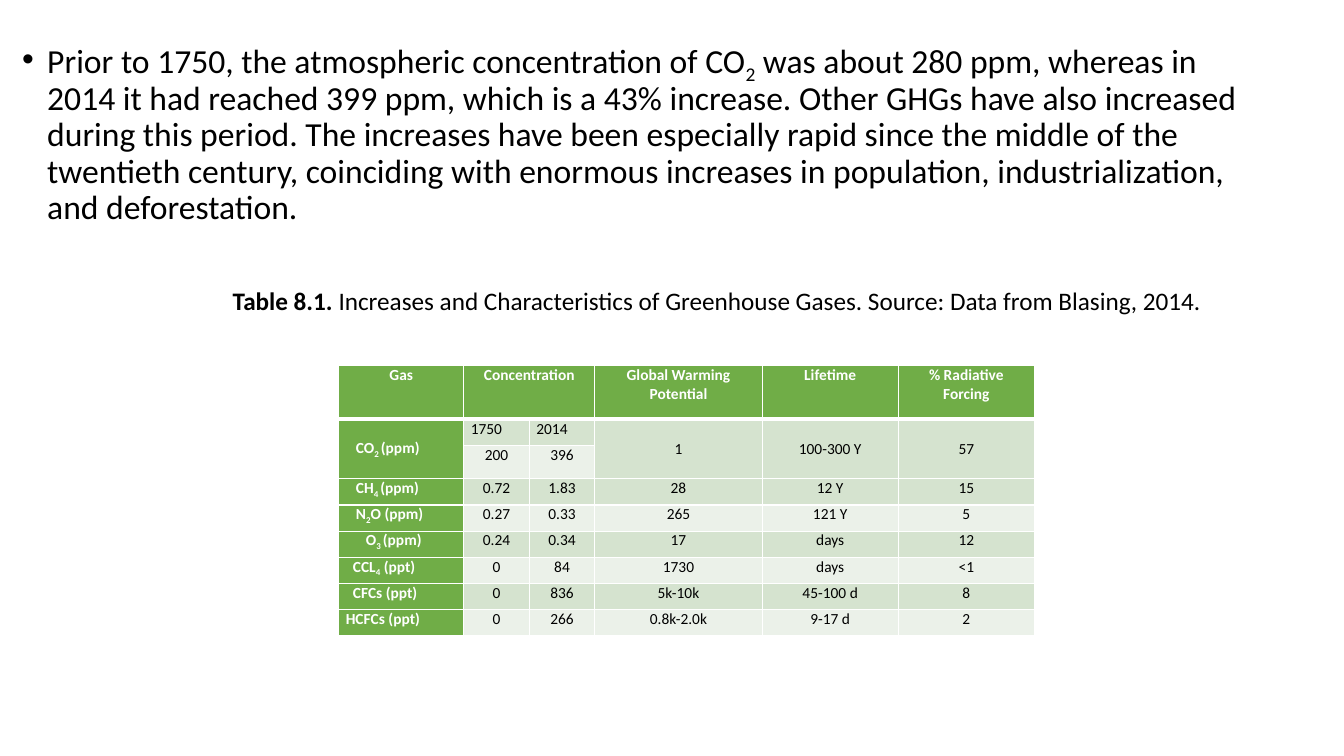
import pptx
import pptx.dml.color
import pptx.enum.text
import pptx.util
from lxml import etree
from pptx.oxml.ns import qn

Inches = pptx.util.Inches
Pt = pptx.util.Pt
Align = pptx.enum.text.PP_ALIGN
Anchor = pptx.enum.text.MSO_ANCHOR

THEME = {
    "font": "Calibri",
    "text": "000000", "on_green": "FFFFFF", "border": "FFFFFF",
    "green": "70AD47", "bands": ["D5E3CF", "EBF1E9"],
    "body_size": 24, "caption_size": 18, "table_size": 11,
    "thin": 1, "thick": 3,
}

# Text between underscores is set as subscript.
INTRO = (
    "Prior to 1750, the atmospheric concentration of CO_2_ was about 280 ppm, "
    "whereas in 2014 it had reached 399 ppm, which is a 43% increase. Other GHGs "
    "have also increased during this period. The increases have been especially "
    "rapid since the middle of the twentieth century, coinciding with enormous "
    "increases in population, industrialization, and deforestation."
)
CAPTION_LABEL = "Table 8.1. "
CAPTION = "Increases and Characteristics of Greenhouse Gases. Source: Data from Blasing, 2014."

ROWS = [
    ["Gas", "Concentration", "", "Global Warming Potential", "Lifetime", "% Radiative\nForcing"],
    ["CO_2 _(ppm)", "1750", "2014", "1", "100-300 Y", "57"],
    ["", "200", "396", "", "", ""],
    ["CH_4 _(ppm)", "0.72", "1.83", "28", "12 Y", "15"],
    ["N_2_O (ppm)", "0.27", "0.33", "265", "121 Y", "5"],
    ["O_3 _(ppm)", "0.24", "0.34", "17", "days", "12"],
    ["CCL_4_ (ppt)", "0", "84", "1730", "days", "<1"],
    ["CFCs (ppt)", "0", "836", "5k-10k", "45-100 d", "8"],
    ["HCFCs (ppt)", "0", "266", "0.8k-2.0k", "9-17 d", "2"],
]
GAS_INDENTS = {1: 0.1, 3: 0.1, 4: 0.1, 5: 0.2, 6: 0.07, 7: 0.07}
COLUMN_WIDTHS = [1.24, 0.65, 0.65, 1.66, 1.35, 1.35]
ROW_HEIGHTS = [0.53, 0.26, 0.33] + [0.26] * 6
# First row, first column, last row, last column
MERGES = [(0, 1, 0, 2)] + [(1, column, 2, column) for column in (0, 3, 4, 5)]
TALL_COLUMNS = (0, 3, 4, 5)
CELL_MARGIN = 0.07


def rgb(name):
    return pptx.dml.color.RGBColor.from_string(name)


def add_span(para, text, size, color, bold=False, subscript=False):
    span = para.add_run()
    span.text = text
    span.font.name = THEME["font"]
    span.font.size = Pt(size)
    span.font.bold = bold
    span.font.color.rgb = rgb(color)
    if subscript:
        span.font._element.set("baseline", "-25000")


def add_marked_text(para, text, size, color, bold=False):
    for index, piece in enumerate(text.split("_")):
        if piece:
            add_span(para, piece, size, color, bold, subscript=index % 2 == 1)


def add_box(page, left, top, width, height):
    box = page.shapes.add_textbox(Inches(left), Inches(top), Inches(width), Inches(height))
    box.text_frame.word_wrap = True
    para = box.text_frame.paragraphs[0]
    para.line_spacing = 0.9
    return para


def add_intro(page):
    para = add_box(page, 0.12, 0.35, 12.59, 2.1)
    properties = para._p.get_or_add_pPr()
    properties.set("marL", str(Inches(0.25)))
    properties.set("indent", str(-Inches(0.25)))
    etree.SubElement(properties, qn("a:buFont"), typeface="Arial")
    etree.SubElement(properties, qn("a:buChar"), char="•")
    add_marked_text(para, INTRO, THEME["body_size"], THEME["text"])


def add_caption(page):
    para = add_box(page, 2.21, 2.82, 10.5, 0.4)
    add_span(para, CAPTION_LABEL, THEME["caption_size"], THEME["text"], bold=True)
    add_span(para, CAPTION, THEME["caption_size"], THEME["text"])


def set_borders(cell, row):
    properties = cell._tc.get_or_add_tcPr()
    thick_side = {0: "a:lnB", 1: "a:lnT"}.get(row)
    for side in ("a:lnL", "a:lnR", "a:lnT", "a:lnB"):
        width = THEME["thick"] if side == thick_side else THEME["thin"]
        line = etree.SubElement(properties, qn(side), w=str(Pt(width)))
        fill = etree.SubElement(line, qn("a:solidFill"))
        etree.SubElement(fill, qn("a:srgbClr"), val=THEME["border"])


def fill_cell(cell, row, column, text):
    is_green = row == 0 or column == 0
    is_left = row > 0 and column == 0 or row == 1 and column in (1, 2)
    set_borders(cell, row)
    cell.fill.solid()
    cell.fill.fore_color.rgb = rgb(THEME["green"] if is_green else THEME["bands"][(row - 1) % 2])
    indent = GAS_INDENTS.get(row, 0) if column == 0 else 0
    cell.margin_left = Inches(CELL_MARGIN + indent)
    cell.margin_right = Inches(CELL_MARGIN)
    cell.margin_top = cell.margin_bottom = 0
    is_tall = row == 1 and column in TALL_COLUMNS
    cell.vertical_anchor = Anchor.MIDDLE if is_tall else Anchor.TOP
    frame = cell.text_frame
    for index, line in enumerate(text.split("\n")):
        para = frame.add_paragraph() if index else frame.paragraphs[0]
        para.alignment = Align.LEFT if is_left else Align.CENTER
        para.font.size = Pt(THEME["table_size"])
        color = THEME["on_green"] if is_green else THEME["text"]
        add_marked_text(para, line, THEME["table_size"], color, bold=is_green)


def add_gas_table(page):
    frame = page.shapes.add_table(
        len(ROWS), len(COLUMN_WIDTHS), Inches(3.36), Inches(3.63),
        Inches(sum(COLUMN_WIDTHS)), Inches(sum(ROW_HEIGHTS)))
    table = frame.table
    for column, width in zip(table.columns, COLUMN_WIDTHS):
        column.width = Inches(width)
    for row, height in zip(table.rows, ROW_HEIGHTS):
        row.height = Inches(height)
    for row, texts in enumerate(ROWS):
        for column, text in enumerate(texts):
            fill_cell(table.cell(row, column), row, column, text)
    for top, left, bottom, right in MERGES:
        table.cell(top, left).merge(table.cell(bottom, right))


def main():
    deck = pptx.Presentation()
    deck.slide_width = Inches(13.33)
    deck.slide_height = Inches(7.5)
    page = deck.slides.add_slide(deck.slide_layouts[6])
    add_intro(page)
    add_caption(page)
    add_gas_table(page)
    deck.save("out.pptx")


if __name__ == "__main__":
    main()
